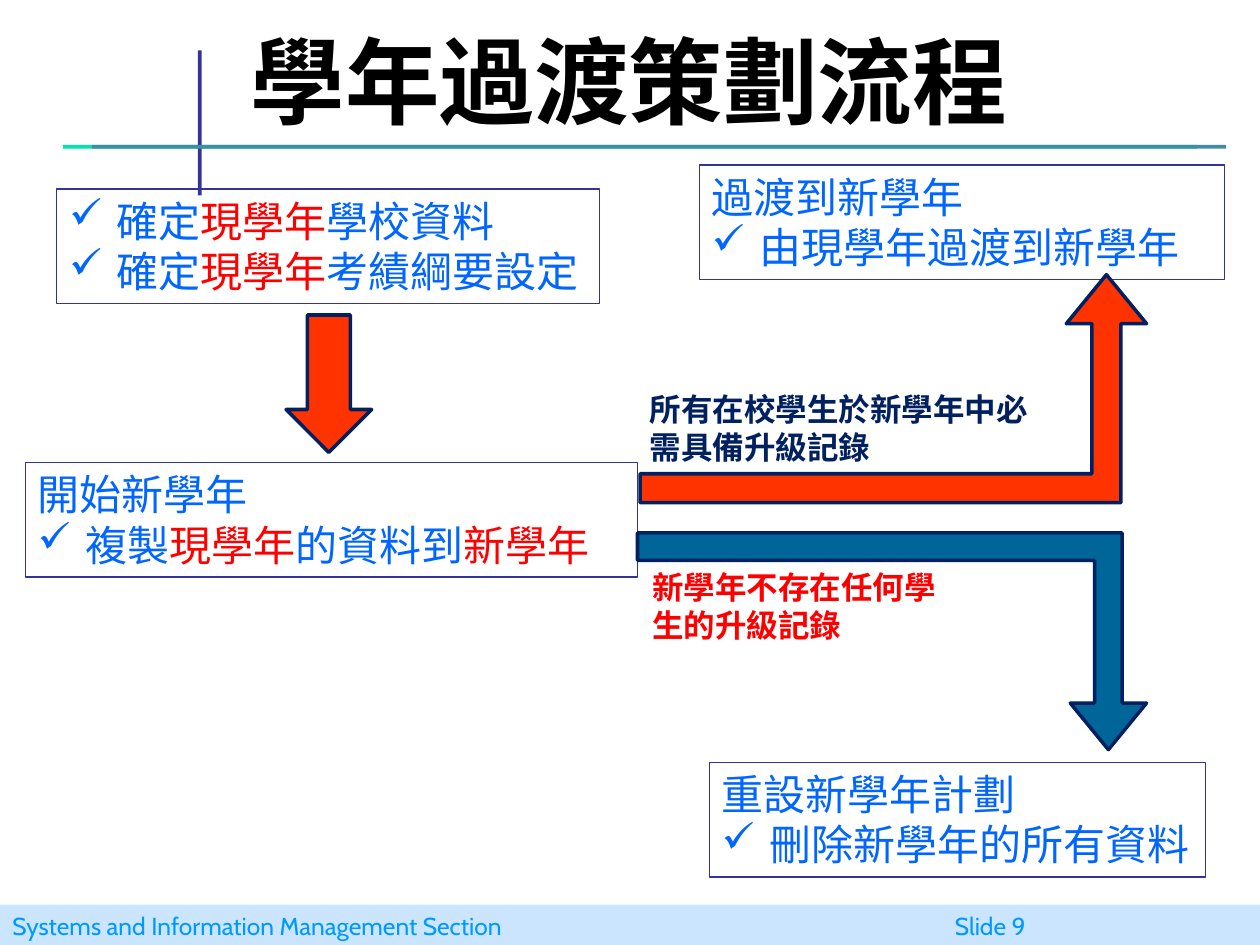
import pptx
import pptx.dml.color
import pptx.enum.shapes
import pptx.enum.text
import pptx.oxml.ns
import pptx.util
from lxml import etree

Inches = pptx.util.Inches
Pt = pptx.util.Pt
Shapes = pptx.enum.shapes.MSO_SHAPE
Anchor = pptx.enum.text.MSO_ANCHOR
Align = pptx.enum.text.PP_ALIGN
qn = pptx.oxml.ns.qn

THEME = {
    "text": "0066FF", "alert": "FF0000", "navy": "002060", "title": "000000",
    "frame": "333399", "green": "00E4A8", "teal": "3F8DA5",
    "band": "99CCFF", "footer": "0099FF", "red": "FF3300", "blue": "006699",
    "cjk": "Noto Sans CJK SC", "latin": "Cabin",
    "title_size": 54, "body_size": 24, "note_size": 18, "footer_size": 14,
    "line_ratio": 1.2,
}

RULES = [
    ((0.5, 1.15, 9, 0.03), "green"),
    ((1.57, 0.4, 0.03, 1.15), "frame"),
    ((0.73, 1.15, 9, 0.03), "teal"),
]
FOOTER = ((0, 7.18, 10, 0.34), "Systems and Information Management Section\tSlide 9", 7.48)
TITLE = ((0.59, 0.13, 8.8, 0.71), "學年過渡策劃流程")
STEPS = [
    ((0.45, 1.5, 4.31, 0.91), None, [
        [("確定", "text"), ("現學年", "alert"), ("學校資料", "text")],
        [("確定", "text"), ("現學年", "alert"), ("考績綱要設定", "text")],
    ]),
    ((5.63, 6.05, 3.94, 0.91), "重設新學年計劃", [[("刪除新學年的所有資料", "text")]]),
    ((5.55, 1.31, 4.17, 0.91), "過渡到新學年", [[("由現學年過渡到新學年", "text")]]),
    ((0.2, 3.67, 4.86, 0.91), "開始新學年", [
        [("複製", "text"), ("現學年", "alert"), ("的資料到", "text"), ("新學年", "alert")],
    ]),
]
NOTES = [
    ((5.08, 4.46, 2.54, 0.7), "新學年不存在任何學生的升級記錄", "alert"),
    ((5.06, 3.05, 3.33, 0.7), "所有在校學生於新學年中必需具備升級記錄", "navy"),
]
BEND = (0.127, 0.176, 0.215)
ARROWS = [
    ((2.27, 2.5, 0.68, 1.09), Shapes.DOWN_ARROW, "red", (), False),
    ((5.08, 2.18, 4.02, 1.81), Shapes.BENT_UP_ARROW, "red", BEND, False),
    ((5.06, 4.23, 4.04, 1.72), Shapes.BENT_UP_ARROW, "blue", BEND, True),
]


def color(name):
    return pptx.dml.color.RGBColor.from_string(THEME[name])


def apply_format(target, values):
    for name, value in values.items():
        setattr(target, name, value)


def add_shape(slide, box, kind=Shapes.RECTANGLE, fill=None, line=None, width=0.75):
    shape = slide.shapes.add_shape(kind, *map(Inches, box))
    shape.shadow.inherit = False
    if fill:
        shape.fill.solid()
        shape.fill.fore_color.rgb = color(fill)
    else:
        shape.fill.background()
    if line:
        shape.line.color.rgb = color(line)
        shape.line.width = Pt(width)
    else:
        shape.line.fill.background()
    return shape


def add_bullet(paragraph):
    properties = paragraph._p.get_or_add_pPr()
    indent = Inches(0.38)
    properties.set("marL", str(indent))
    properties.set("indent", str(-indent))
    etree.SubElement(properties, qn("a:buChar")).set("char", "✓")


def write(shape, paragraphs, size, font="cjk", bold=False, align=Align.LEFT, anchor=Anchor.TOP):
    frame = shape.text_frame
    apply_format(frame, {"word_wrap": True, "vertical_anchor": anchor})
    for index, (runs, bulleted) in enumerate(paragraphs):
        paragraph = frame.add_paragraph() if index else frame.paragraphs[0]
        if bulleted:
            add_bullet(paragraph)
        apply_format(paragraph, {
            "alignment": align,
            "line_spacing": Pt(round(THEME[size] * THEME["line_ratio"], 1)),
        })
        for text, color_name in runs:
            run = paragraph.add_run()
            run.text = text
            apply_format(run.font, {"size": Pt(THEME[size]), "name": THEME[font], "bold": bold})
            run.font.color.rgb = color(color_name)
            east_asian = etree.SubElement(run._r.get_or_add_rPr(), qn("a:ea"))
            east_asian.set("typeface", THEME["cjk"])


def add_footer(slide):
    box, text, tab = FOOTER
    shape = add_shape(slide, box, fill="band")
    fill_color = shape._element.spPr.find(qn("a:solidFill"))[0]
    etree.SubElement(fill_color, qn("a:alpha")).set("val", "50000")
    properties = shape.text_frame.paragraphs[0]._p.get_or_add_pPr()
    stops = etree.SubElement(properties, qn("a:tabLst"))
    stop = etree.SubElement(stops, qn("a:tab"))
    stop.set("pos", str(Inches(tab)))
    stop.set("algn", "l")
    write(shape, [([(text, "footer")], False)], "footer_size", "latin", anchor=Anchor.MIDDLE)


def add_note(slide, box, text, color_name, size, align=Align.LEFT):
    shape = slide.shapes.add_textbox(*map(Inches, box))
    write(shape, [([(text, color_name)], False)], size, bold=True, align=align)


def main():
    presentation = pptx.Presentation()
    apply_format(presentation, {"slide_width": Inches(10), "slide_height": Inches(7.5)})
    slide = presentation.slides.add_slide(presentation.slide_layouts[6])
    for box, fill in RULES:
        add_shape(slide, box, fill=fill)
    add_footer(slide)
    for box, heading, items in STEPS:
        paragraphs = [([(heading, "text")], False)] if heading else []
        paragraphs += [(runs, True) for runs in items]
        write(add_shape(slide, box, line="frame"), paragraphs, "body_size")
    for box, text, color_name in NOTES:
        add_note(slide, box, text, color_name, "note_size")
    add_note(slide, *TITLE, "title", "title_size", Align.CENTER)
    for box, kind, fill, adjustments, flipped in ARROWS:
        arrow = add_shape(slide, box, kind, fill, "navy", 2)
        for index, value in enumerate(adjustments):
            arrow.adjustments[index] = value
        if flipped:
            arrow._element.spPr.find(qn("a:xfrm")).set("flipV", "1")
    presentation.save("out.pptx")


if __name__ == "__main__":
    main()
